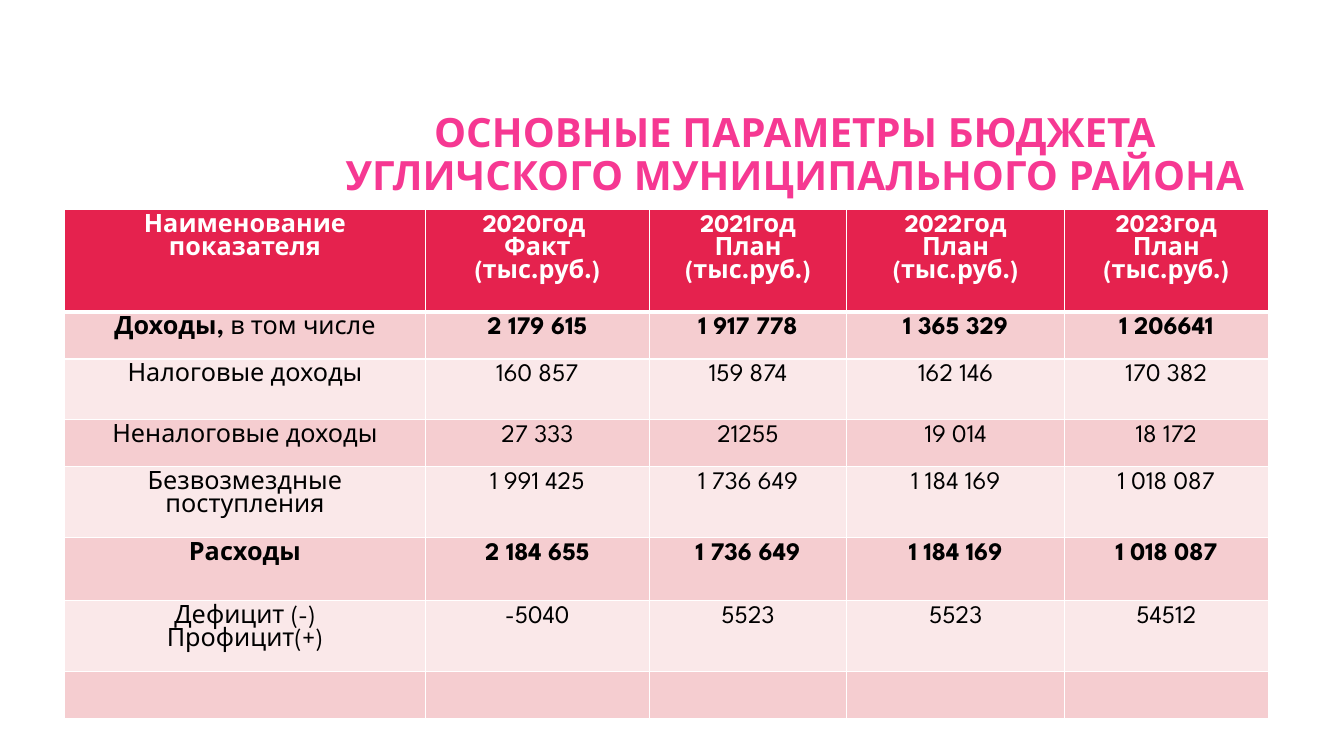
from lxml import etree
from pptx import Presentation
from pptx import util as u
from pptx.dml.color import RGBColor
from pptx.enum import text as t
from pptx.oxml import ns

FONT = "League Spartan"
WHITE, BLACK, PINK, RED = "FFFFFF", "000000", "F63892", "E5224E"
BANDS = ["FAE8E9", "F5CDD0"]


def write(frame, paragraphs, size=18, color=BLACK, bold=False, spacing=None):
    """Fill a text frame; each paragraph is a string or a list of (text, bold) runs."""
    for index, content in enumerate(paragraphs):
        paragraph = frame.paragraphs[0] if index == 0 else frame.add_paragraph()
        paragraph.alignment = t.PP_ALIGN.CENTER
        paragraph.line_spacing = spacing
        paragraph.font.size = u.Pt(size)
        runs = [(content, bold)] if isinstance(content, str) else content
        for words, heavy in runs:
            run = paragraph.add_run()
            run.text = words
            run.font.name = FONT
            run.font.size = u.Pt(size)
            run.font.bold = heavy
            run.font.color.rgb = RGBColor.from_string(color)


def add_borders(cell, color, bottom_width):
    properties = cell._tc.get_or_add_tcPr()
    for side, width in (("L", 1), ("R", 1), ("T", 1), ("B", bottom_width)):
        line = etree.SubElement(properties, ns.qn(f"a:ln{side}"), w=str(u.Pt(width)))
        fill = etree.SubElement(line, ns.qn("a:solidFill"))
        etree.SubElement(fill, ns.qn("a:srgbClr"), val=color)


presentation = Presentation()
presentation.slide_width, presentation.slide_height = u.Inches(13.33), u.Inches(7.5)
slide = presentation.slides.add_slide(presentation.slide_layouts[6])

# One hundredth of the slide's width and height
across = presentation.slide_width / 100
down = presentation.slide_height / 100

title = slide.shapes.add_textbox(
    int(23.8 * across), int(11.2 * down), int(70.7 * across), int(18.8 * down))
title.text_frame.word_wrap = True
title.text_frame.vertical_anchor = t.MSO_ANCHOR.MIDDLE
write(title.text_frame, ["ОСНОВНЫЕ ПАРАМЕТРЫ БЮДЖЕТА УГЛИЧСКОГО МУНИЦИПАЛЬНОГО РАЙОНА"],
      size=28.8, color=PINK, bold=True, spacing=0.9)

years = [("2020год ", "Факт"), ("2021год", "План"), ("2022год", "План"), ("2023год", "План")]
header = [["Наименование показателя"]] + [[year, kind, "(тыс.руб.)"] for year, kind in years]
income = [("Доходы,", True), (" в том числе", False)]
indicators = [
    ([income], "2 179 615", "1 917 778", "1 365 329", "1 206641"),
    (["Налоговые доходы"], "160 857", "159 874", "162 146", "170 382"),
    (["Неналоговые доходы"], "27 333", "21255", "19 014", "18 172"),
    (["Безвозмездные поступления"], "1 991 425", "1 736 649", "1 184 169", "1 018 087"),
    (["Расходы"], "2 184 655", "1 736 649", "1 184 169", "1 018 087"),
    (["Дефицит (-)", "Профицит(+)"], "-5040", "5523", "5523", "54512"),
    ([""], "", "", "", ""),
]
rows = [header] + [[name] + [[value] for value in values] for name, *values in indicators]
bold_rows = {0, 1, 5}

column_shares = [26.86, 16.65, 14.7, 16.2, 15.15]
row_shares = [13.5, 6.25, 8, 6.25, 7.5, 8.4, 7.5, 6.25]
table = slide.shapes.add_table(
    len(rows), len(column_shares), int(4.8 * across), int(27.75 * down),
    int(sum(column_shares) * across), int(sum(row_shares) * down)).table
for column, share in zip(table.columns, column_shares):
    column.width = int(share * across)

for number, (row, share, contents) in enumerate(zip(table.rows, row_shares, rows)):
    row.height = int(share * down)
    is_header = number == 0
    for cell, paragraphs in zip(row.cells, contents):
        add_borders(cell, WHITE, bottom_width=3 if is_header else 1)
        cell.fill.solid()
        cell.fill.fore_color.rgb = RGBColor.from_string(RED if is_header else BANDS[number % 2])
        write(cell.text_frame, paragraphs, color=WHITE if is_header else BLACK,
              bold=number in bold_rows)

presentation.save("out.pptx")
